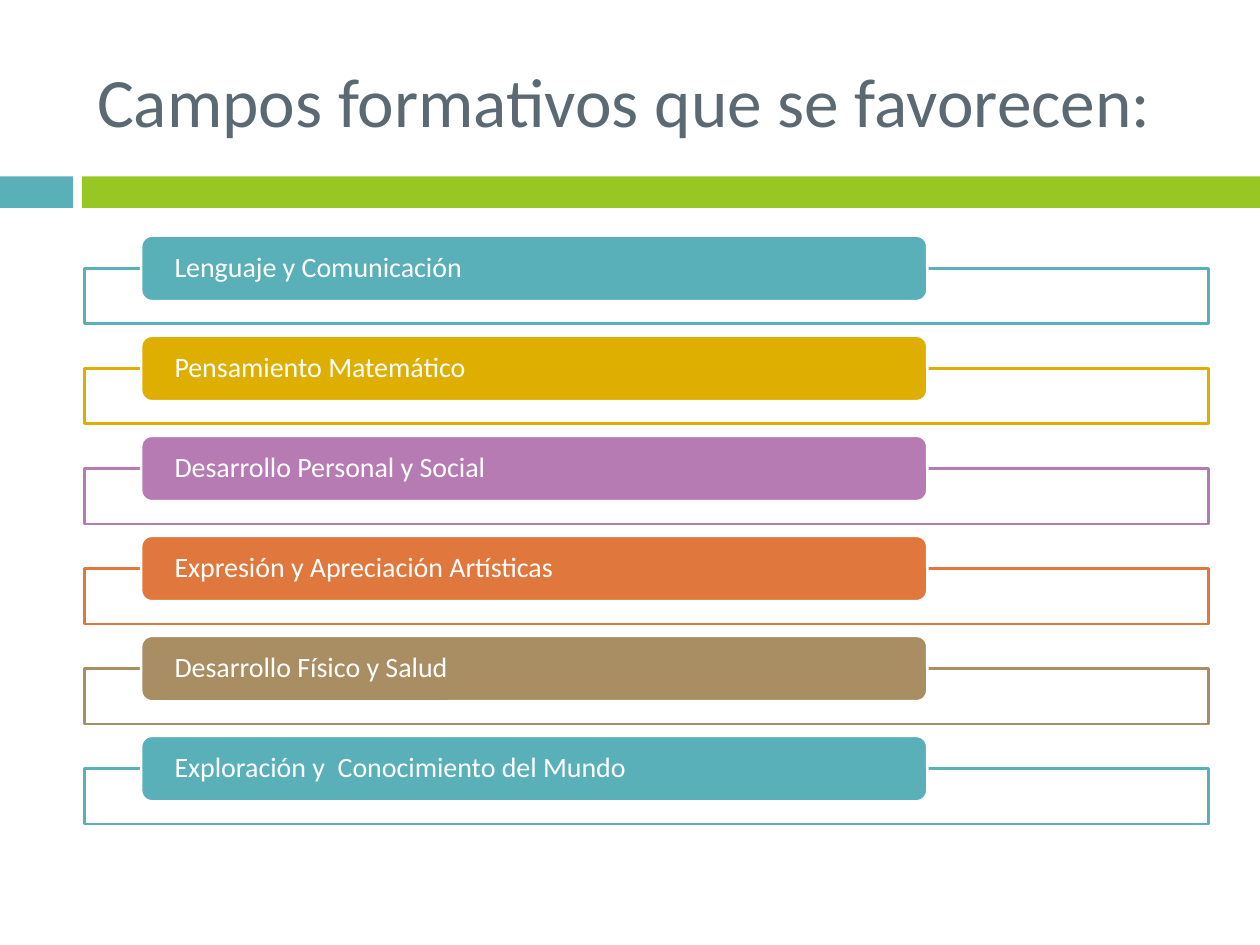
from pptx import Presentation
from pptx.dml.color import RGBColor
from pptx.enum.shapes import MSO_SHAPE
from pptx.enum.text import MSO_ANCHOR, MSO_AUTO_SIZE, PP_ALIGN
from pptx.util import Inches, Pt

RECT, ROUNDED = MSO_SHAPE.RECTANGLE, MSO_SHAPE.ROUNDED_RECTANGLE
MIDDLE, LEFT = MSO_ANCHOR.MIDDLE, PP_ALIGN.LEFT
NO_AUTOFIT = MSO_AUTO_SIZE.NONE

TITLE = "Campos formativos que se favorecen:"
FIELDS = [
    ("Lenguaje y Comunicación", "teal"),
    ("Pensamiento Matemático", "gold"),
    ("Desarrollo Personal y Social", "mauve"),
    ("Expresión y Apreciación Artísticas", "orange"),
    ("Desarrollo Físico y Salud", "tan"),
    ("Exploración y  Conocimiento del Mundo", "teal"),
]

THEME = {
    "font": "Calibri",
    "title_size": 39.6,
    "field_size": 16,
    "line_width": 1.5,
    "white": "FFFFFF",
    "slate": "5B6973",
    "green": "98C723",
    "teal": "59B0B9",
    "gold": "DEAE00",
    "mauve": "B77BB4",
    "orange": "E0773C",
    "tan": "A98D63",
}

LEFT_EDGE, CONTENT_WIDTH = 0.67, 8.92
BAND_TOP, BAND_HEIGHT = 1.4, 0.25
FIRST_TAG_TOP, LAST_TAG_TOP = 1.87, 5.84
TAG_LEFT, TAG_WIDTH, TAG_HEIGHT = 1.12, 6.24, 0.52
FRAME_HEIGHT = 0.44
TAG_INSET = 0.24


def color(name):
    return RGBColor.from_string(THEME[name])


def add_box(slide, preset, box, fill, line=None):
    shape = slide.shapes.add_shape(preset, *map(Inches, box))
    shape.shadow.inherit = False
    shape.fill.solid()
    shape.fill.fore_color.rgb = color(fill)
    if line:
        shape.line.color.rgb = color(line)
        shape.line.width = Pt(THEME["line_width"])
    else:
        shape.line.fill.background()
    return shape


def set_text(shape, text, size, ink):
    frame = shape.text_frame
    frame.text = text
    frame.word_wrap = True
    frame.auto_size = NO_AUTOFIT
    frame.vertical_anchor = MIDDLE
    paragraph = frame.paragraphs[0]
    paragraph.alignment = LEFT
    font = paragraph.runs[0].font
    font.name = THEME["font"]
    font.size = Pt(THEME[size])
    font.color.rgb = color(ink)
    return frame


def add_title(slide):
    title = slide.shapes.title
    title.left, title.top = Inches(LEFT_EDGE), Inches(0.25)
    title.width, title.height = Inches(CONTENT_WIDTH), Inches(1.08)
    set_text(title, TITLE, "title_size", "slate")


def add_field(slide, name, accent, top):
    """Add an outlined frame with a coloured tag centred on its upper edge."""
    frame_box = (LEFT_EDGE, top + TAG_HEIGHT / 2, CONTENT_WIDTH, FRAME_HEIGHT)
    add_box(slide, RECT, frame_box, "white", accent)
    tag_box = (TAG_LEFT, top, TAG_WIDTH, TAG_HEIGHT)
    tag = add_box(slide, ROUNDED, tag_box, accent, "white")
    text_frame = set_text(tag, name, "field_size", "white")
    text_frame.margin_left = text_frame.margin_right = Inches(TAG_INSET)
    text_frame.margin_top = text_frame.margin_bottom = 0
    text_frame.paragraphs[0].line_spacing = 0.9


def main():
    deck = Presentation()
    deck.slide_width, deck.slide_height = Inches(10), Inches(7.5)
    slide = deck.slides.add_slide(deck.slide_layouts[5])

    add_box(slide, RECT, (0, BAND_TOP, 0.58, BAND_HEIGHT), "teal")
    add_box(slide, RECT, (0.65, BAND_TOP, 9.35, BAND_HEIGHT), "green")
    add_title(slide)

    pitch = (LAST_TAG_TOP - FIRST_TAG_TOP) / (len(FIELDS) - 1)
    for row, (name, accent) in enumerate(FIELDS):
        add_field(slide, name, accent, FIRST_TAG_TOP + row * pitch)

    deck.save("out.pptx")


if __name__ == "__main__":
    main()
